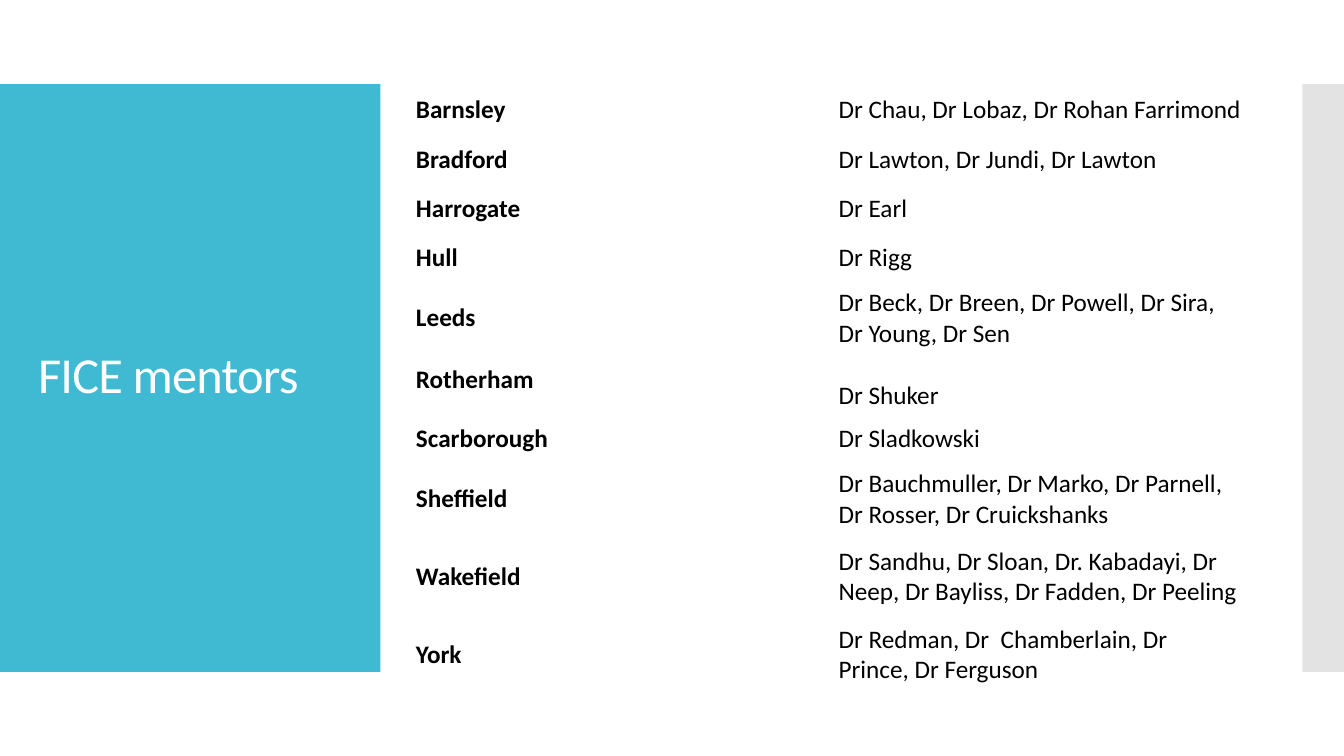
import pptx
import pptx.util
import pptx.dml.color
import pptx.enum.shapes
import pptx.enum.text
import lxml.etree

RGBColor = pptx.dml.color.RGBColor
TEAL = RGBColor(0x40, 0xBA, 0xD2)
GREY = RGBColor(0xC8, 0xC8, 0xC8)
WHITE = RGBColor(0xFF, 0xFF, 0xFF)
BLACK = RGBColor(0x00, 0x00, 0x00)
MIDDLE = pptx.enum.text.MSO_ANCHOR.MIDDLE

prs = pptx.Presentation()
prs.slide_width = pptx.util.Inches(13.33)
prs.slide_height = pptx.util.Inches(7.5)
W, H = prs.slide_width, prs.slide_height
s = prs.slides.add_slide(prs.slide_layouts[6])


def write(tf, text, size=18, color=BLACK, bold=False, line=1.0, gap=0, spacing=0):
    """Put each line of text in its own paragraph, with gap points between them."""
    for i, words in enumerate(text.split("\n")):
        p = tf.paragraphs[0] if i == 0 else tf.add_paragraph()
        p.line_spacing = line
        if i:
            p.space_before = pptx.util.Pt(gap)
        r = p.add_run()
        r.text = words
        r.font.name = "Calibri"
        r.font.size = pptx.util.Pt(size)
        r.font.bold = bold
        r.font.color.rgb = color
        if spacing:
            r.font._element.set("spc", str(round(spacing * 100)))


# Side panels: left, width, colour, opacity in percent
band_top, band_height = round(H / 9), round(H * 7 / 9)
panels = [(0, 0.283, TEAL, 100), (0.969, 0.031, GREY, 50)]
for left, width, color, opacity in panels:
    sp = s.shapes.add_shape(pptx.enum.shapes.MSO_SHAPE.RECTANGLE,
                            round(W * left), band_top, round(W * width), band_height)
    sp.shadow.inherit = False
    sp.fill.solid()
    sp.fill.fore_color.rgb = color
    sp.line.fill.background()
    if opacity < 100:
        clr = sp.fill._xPr.find(".//" + pptx.oxml.ns.qn("a:srgbClr"))
        lxml.etree.SubElement(clr, pptx.oxml.ns.qn("a:alpha"), val=str(opacity * 1000))

title = s.shapes.add_textbox(round(W * 0.021), round(H * 0.164),
                             round(W * 0.242), round(H * 0.67))
tf = title.text_frame
tf.word_wrap = True
tf.vertical_anchor = MIDDLE
write(tf, "FICE mentors", size=36, color=WHITE, line=0.9, spacing=-0.6)

mentors = [
    ("Barnsley", "Dr Chau, Dr Lobaz, Dr Rohan Farrimond"),
    ("Bradford", "Dr Lawton, Dr Jundi, Dr Lawton"),
    ("Harrogate", "Dr Earl"),
    ("Hull", "Dr Rigg"),
    ("Leeds\nRotherham", "Dr Beck, Dr Breen, Dr Powell, Dr Sira, Dr Young, Dr Sen\nDr Shuker"),
    ("Scarborough", "Dr Sladkowski"),
    ("Sheffield", "Dr Bauchmuller, Dr Marko, Dr Parnell, Dr Rosser, Dr Cruickshanks"),
    ("Wakefield", "Dr Sandhu, Dr Sloan, Dr. Kabadayi, Dr Neep, Dr Bayliss, Dr Fadden, Dr Peeling"),
    ("York", "Dr Redman, Dr  Chamberlain, Dr Prince, Dr Ferguson"),
]
row_height = pptx.util.Inches(0.49)
table = s.shapes.add_table(len(mentors), 2, round(W * 0.302), round(H * 0.113),
                           round(W * 0.629), row_height * len(mentors)).table
table.first_row = False
table.horz_banding = False
for i, row in enumerate(mentors):
    table.rows[i].height = pptx.util.Inches(0.84) if row[0] == "Wakefield" else row_height
    for j, text in enumerate(row):
        cell = table.cell(i, j)
        cell.fill.background()
        cell.vertical_anchor = MIDDLE
        write(cell.text_frame, text, bold=j == 0, gap=22)

prs.save("out.pptx")
